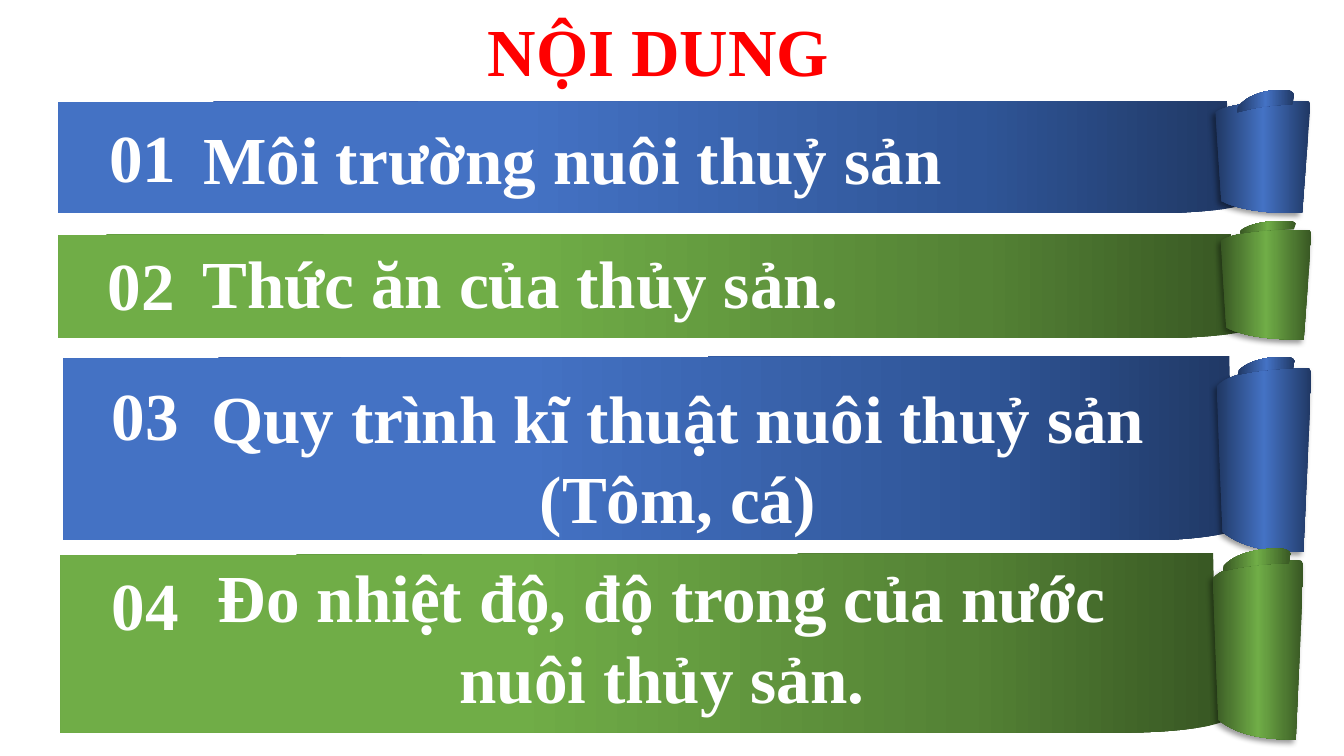
from copy import deepcopy
from dataclasses import dataclass

from lxml.etree import SubElement
from pptx import Presentation
from pptx.dml.color import RGBColor
from pptx.enum.text import MSO_ANCHOR, MSO_AUTO_SIZE, PP_ALIGN
from pptx.oxml.ns import qn
from pptx.util import Cm, Pt


@dataclass(frozen=True)
class Theme:
    font: str = "Times New Roman"
    size: int = 48
    title: str = "FF0000"
    text: str = "FFFFFF"
    shadow: str = "000000"
    blue: tuple = ("203864", "2F5597", "4472C4")
    green: tuple = ("385723", "548235", "70AD47")


THEME = Theme()
TITLE = "NỘI DUNG"
TITLE_BOX = (11.91, 0.05, 9.37, 2.39)

# Boxes are left, top, width, height in centimetres.
BANDS = [
    {"number": "01", "topic": "Môi trường nuôi thuỷ sản",
     "colors": THEME.blue, "align": PP_ALIGN.JUSTIFY,
     "ribbon": (1.47, 2.54, 29.69, 2.84), "roll": (30.63, 2.54, 2.39, 2.84),
     "curl": (31.17, 2.26, 1.45, 0.58),
     "number_box": (2.31, 2.77, 2.57, 2.31), "topic_box": (4.88, 2.82, 23.77, 2.31)},
    {"number": "02", "topic": "Thức ăn của thủy sản.",
     "colors": THEME.green, "align": PP_ALIGN.JUSTIFY,
     "ribbon": (1.47, 5.89, 29.79, 2.64), "roll": (30.76, 5.79, 2.29, 2.77),
     "curl": (31.24, 5.56, 1.42, 0.33),
     "number_box": (1.98, 5.99, 3.15, 2.31), "topic_box": (4.85, 5.94, 24.89, 2.31)},
    {"number": "03", "topic": "Quy trình kĩ thuật nuôi thuỷ sản (Tôm, cá)",
     "colors": THEME.blue, "align": PP_ALIGN.CENTER,
     "ribbon": (1.6, 8.97, 29.62, 4.65), "roll": (30.66, 9.27, 2.39, 4.65),
     "curl": (31.19, 8.99, 1.45, 0.46),
     "number_box": (2.34, 9.27, 2.64, 2.31), "topic_box": (4.45, 9.32, 25.27, 4.37)},
    {"number": "04", "topic": "Đo nhiệt độ, độ trong của nước nuôi thủy sản.",
     "colors": THEME.green, "align": PP_ALIGN.CENTER,
     "ribbon": (1.52, 13.94, 29.29, 4.52), "roll": (30.56, 14.12, 2.29, 4.52),
     "curl": (30.81, 13.82, 1.73, 0.58),
     "number_box": (2.39, 14.05, 2.54, 2.31), "topic_box": (4.39, 13.84, 24.59, 4.37)},
]

# Outlines in percent of the box: one point is a corner, three points a curve.
RIBBON = [[(0, 1.3)], [(0, 100)], [(91.5, 100)],
          [(96.3, 100), (99.1, 96.5), (100, 94)],
          [(100, 62.5), (99.2, 31), (99.2, 0)]]
ROLL = [[(91.5, 100)], [(68, 100), (30, 99), (6.4, 89)], [(0, 10)],
        [(16, 1), (67, 0), (93.6, 0)], [(104, 0), (98, 4), (100, 6)]]
CURL = [[(0, 100)], [(1.8, 74)], [(25, 4), (68, 0), (82, 0)],
        [(91, 0), (98, 9), (100, 22)], [(96.5, 65)],
        [(72, 65), (32, 74), (0, 100)]]


def fill_gradient(shape, stops):
    """Fill from right to left with (percent, color) stops."""
    shape.fill.gradient()
    shape.fill.gradient_angle = 180
    stop_list = shape.element.spPr.find(qn("a:gradFill")).find(qn("a:gsLst"))
    stop_list.append(deepcopy(stop_list[-1]))
    for stop, (percent, color) in zip(shape.fill.gradient_stops, stops):
        stop.position = percent / 100
        stop.color.rgb = RGBColor.from_string(color)


def bend_lines(shape, outline, width, height):
    """Turn the straight segments of curved steps into cubic curves."""
    lines = list(shape.element.spPr.iter(qn("a:lnTo")))
    for line, step in zip(lines, outline[1:]):
        if len(step) == 3:
            line.tag = qn("a:cubicBezTo")
            for index, (x, y) in enumerate(step[:2]):
                control = deepcopy(line[-1])
                control.set("x", str(Cm(x * width / 100)))
                control.set("y", str(Cm(y * height / 100)))
                line.insert(index, control)


def add_outline(shapes, outline, box, stops):
    left, top, width, height = box
    corners = [(Cm(left + x * width / 100), Cm(top + y * height / 100))
               for x, y in (step[-1] for step in outline)]
    builder = shapes.build_freeform(*corners[0])
    builder.add_line_segments(corners[1:], close=True)
    shape = builder.convert_to_shape()
    bend_lines(shape, outline, width, height)
    fill_gradient(shape, stops)
    shape.line.fill.background()
    shape.shadow.inherit = False
    return shape


def add_shadow(shape):
    effects = shape.element.spPr.find(qn("a:effectLst"))
    shadow = SubElement(effects, qn("a:outerShdw"), blurRad=str(Pt(4)),
                        dist=str(Pt(3)), dir=str(135 * 60000), rotWithShape="0")
    color = SubElement(shadow, qn("a:srgbClr"), val=THEME.shadow)
    SubElement(color, qn("a:alpha"), val="40000")


def write(frame, text, color, align):
    frame.text = text
    para = frame.paragraphs[0]
    para.alignment = align
    font = para.runs[0].font
    font.name, font.size, font.bold = THEME.font, Pt(THEME.size), True
    font.color.rgb = RGBColor.from_string(color)


def add_label(shapes, text, box, align):
    frame = shapes.add_textbox(*map(Cm, box)).text_frame
    frame.word_wrap = True
    frame.auto_size = MSO_AUTO_SIZE.SHAPE_TO_FIT_TEXT
    frame.vertical_anchor = MSO_ANCHOR.MIDDLE
    write(frame, text, THEME.text, align)


def add_title(page):
    title = page.shapes.title
    title.left, title.top, title.width, title.height = map(Cm, TITLE_BOX)
    frame = title.text_frame
    frame.word_wrap = False
    frame.auto_size = MSO_AUTO_SIZE.SHAPE_TO_FIT_TEXT
    frame.vertical_anchor = MSO_ANCHOR.TOP
    frame.margin_left = frame.margin_right = Cm(0.33)
    frame.margin_top = frame.margin_bottom = Cm(0.18)
    write(frame, TITLE, THEME.title, PP_ALIGN.CENTER)


def add_band(page, band):
    shapes = page.shapes.add_group_shape().shapes
    dark, middle, light = band["colors"]
    round_stops = [(0, dark), (50, light), (100, dark)]
    add_outline(shapes, RIBBON, band["ribbon"], [(0, dark), (22, middle), (61, light)])
    add_shadow(add_outline(shapes, ROLL, band["roll"], round_stops))
    add_outline(shapes, CURL, band["curl"], round_stops)
    add_label(shapes, band["number"], band["number_box"], PP_ALIGN.CENTER)
    add_label(shapes, band["topic"], band["topic_box"], band["align"])


def main():
    deck = Presentation()
    deck.slide_width, deck.slide_height = Cm(33.87), Cm(19.05)
    page = deck.slides.add_slide(deck.slide_layouts[5])
    add_title(page)
    for band in BANDS:
        add_band(page, band)
    deck.save("out.pptx")


if __name__ == "__main__":
    main()
